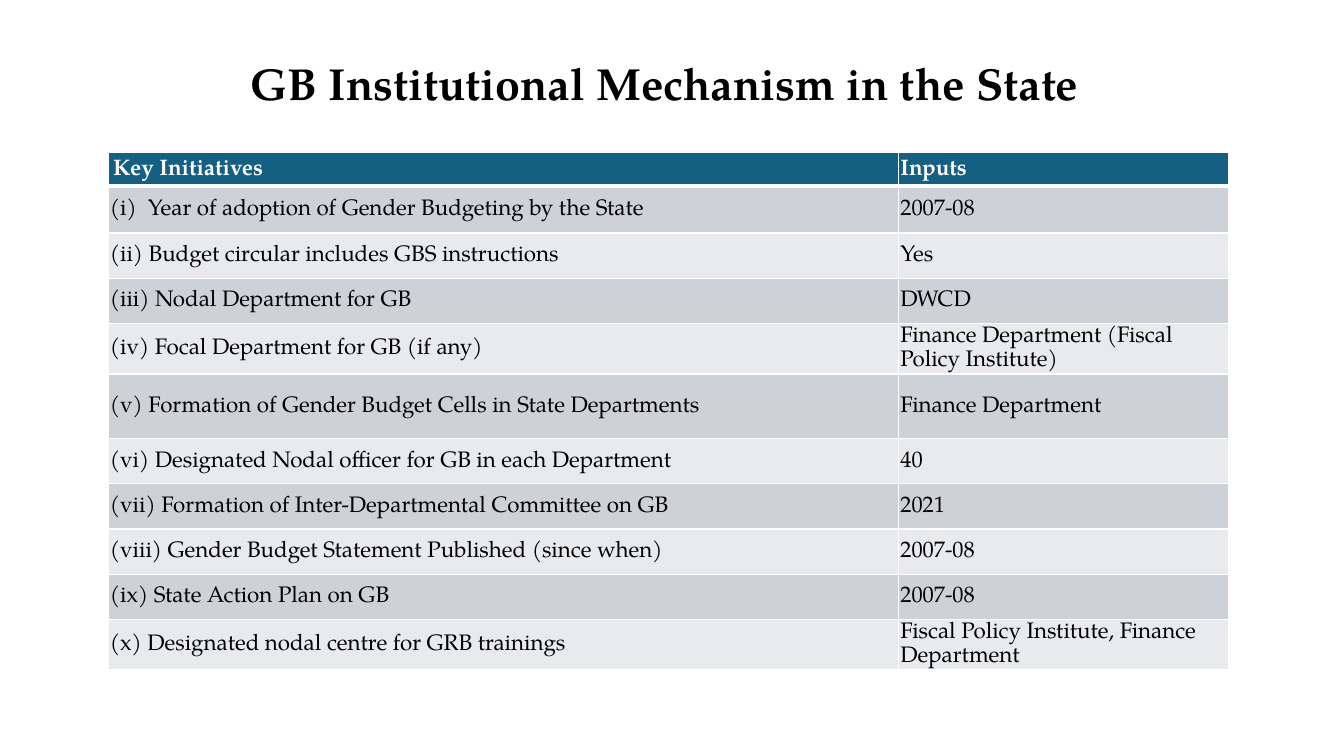
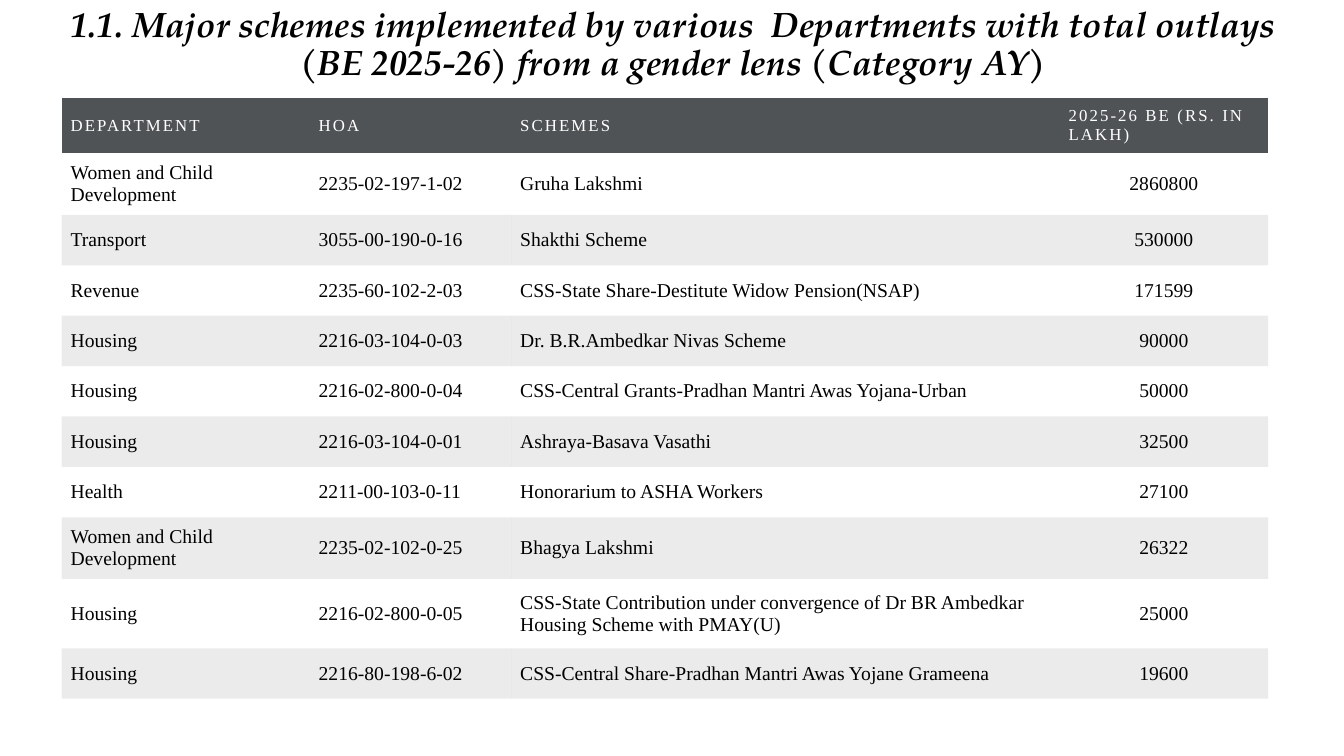
from dataclasses import dataclass

from lxml.etree import SubElement
from pptx import Presentation
from pptx.dml.color import RGBColor
from pptx.enum.text import MSO_ANCHOR, MSO_AUTO_SIZE, PP_ALIGN
from pptx.oxml.ns import qn
from pptx.util import Cm, Pt


@dataclass(frozen=True)
class Theme:
    display: str = "TeX Gyre Pagella"
    serif: str = "Times New Roman"
    black: str = "000000"
    white: str = "FFFFFF"
    teal: str = "156082"
    band_dark: str = "CCD2D8"
    band_light: str = "E8EAED"
    slate: str = "505356"
    title: float = 32
    long_title: float = 25.2
    initiative: float = 16
    scheme_head: float = 12
    scheme: float = 14
    plain_table: str = "{2D5ABB26-0587-4C30-8999-92F81FD0307C}"


THEME = Theme()

INITIATIVES = [
    ("Key Initiatives", "Inputs"),
    ("(i)  Year of adoption of Gender Budgeting by the State", "2007-08"),
    ("(ii) Budget circular includes GBS instructions", "Yes"),
    ("(iii) Nodal Department for GB", "DWCD"),
    ("(iv) Focal Department for GB (if any)",
     "Finance Department (Fiscal Policy Institute)"),
    ("(v) Formation of Gender Budget Cells in State Departments",
     "Finance Department"),
    ("(vi) Designated Nodal officer for GB in each Department", "40"),
    ("(vii) Formation of Inter-Departmental Committee on GB", "2021"),
    ("(viii) Gender Budget Statement Published (since when)", "2007-08"),
    ("(ix) State Action Plan on GB", "2007-08"),
    ("(x) Designated nodal centre for GRB trainings",
     "Fiscal Policy Institute, Finance Department"),
]

SCHEMES = [
    ("DEPARTMENT", "HOA", "SCHEMES", "2025-26 BE (RS. IN LAKH)"),
    ("Women and Child Development", "2235-02-197-1-02", "Gruha Lakshmi",
     "2860800"),
    ("Transport", "3055-00-190-0-16", "Shakthi Scheme", "530000"),
    ("Revenue", "2235-60-102-2-03",
     "CSS-State Share-Destitute Widow Pension(NSAP)", "171599"),
    ("Housing", "2216-03-104-0-03", "Dr. B.R.Ambedkar Nivas Scheme", "90000"),
    ("Housing", "2216-02-800-0-04",
     "CSS-Central Grants-Pradhan Mantri Awas Yojana-Urban", "50000"),
    ("Housing", "2216-03-104-0-01", "Ashraya-Basava Vasathi", "32500"),
    ("Health", "2211-00-103-0-11", "Honorarium to ASHA Workers", "27100"),
    ("Women and Child Development", "2235-02-102-0-25", "Bhagya Lakshmi",
     "26322"),
    ("Housing", "2216-02-800-0-05",
     "CSS-State Contribution under convergence of Dr BR Ambedkar "
     "Housing Scheme with PMAY(U)", "25000"),
    ("Housing", "2216-80-198-6-02",
     "CSS-Central Share-Pradhan Mantri Awas Yojane Grameena", "19600"),
]


def add_run(p, text, font, size, color, bold=False, italic=False):
    r = p.add_run()
    r.text = text
    r.font.name, r.font.size = font, Pt(size)
    r.font.bold, r.font.italic = bold, italic
    r.font.color.rgb = RGBColor.from_string(color)
    return r


def add_titled_slide(prs, text, box, size, italic=False):
    """Add a slide whose title placeholder fills the box."""
    s = prs.slides.add_slide(prs.slide_layouts.get_by_name("Title Only"))
    sp = s.shapes.title
    sp.left, sp.top, sp.width, sp.height = (Cm(v) for v in box)
    tf = sp.text_frame
    tf.word_wrap = True
    tf.auto_size = MSO_AUTO_SIZE.NONE
    tf.vertical_anchor = MSO_ANCHOR.MIDDLE
    p = tf.paragraphs[0]
    p.alignment, p.line_spacing = PP_ALIGN.CENTER, 0.9
    add_run(p, text, THEME.display, size, THEME.black, True, italic)
    return s


def add_grid(s, left, top, widths, heights):
    """Add an unstyled table with the given column widths and row heights."""
    frame = s.shapes.add_table(len(heights), len(widths), Cm(left), Cm(top),
                               Cm(sum(widths)), Cm(sum(heights)))
    table = frame.table
    table.horz_banding = False
    frame._element.find(".//" + qn("a:tableStyleId")).text = THEME.plain_table
    for column, width in zip(table.columns, widths):
        column.width = Cm(width)
    for row, height in zip(table.rows, heights):
        row.height = Cm(height)
    return table


def set_margins(cell, across, down):
    cell.vertical_anchor = MSO_ANCHOR.MIDDLE
    cell.margin_left = cell.margin_right = Cm(across)
    cell.margin_top = cell.margin_bottom = Cm(down)


def set_fill(cell, color, alpha=None):
    cell.fill.solid()
    cell.fill.fore_color.rgb = RGBColor.from_string(color)
    if alpha is not None:
        srgb = cell._tc.tcPr.find(".//" + qn("a:srgbClr"))
        SubElement(srgb, qn("a:alpha"), val=str(alpha * 1000))


def set_borders(cell, color, **widths):
    """Draw cell edges; tcPr wants them, in schema order, before the fill."""
    tc_pr = cell._tc.get_or_add_tcPr()
    for i, (edge, width) in enumerate(widths.items()):
        ln = SubElement(tc_pr, qn("a:" + edge), w=str(Pt(width)))
        fill = SubElement(ln, qn("a:solidFill"))
        SubElement(fill, qn("a:srgbClr"), val=color)
        tc_pr.insert(i, ln)


def add_initiatives(s, left, top):
    heights = [0.84, 1.19] + [1.14] * 3 + [1.63] + [1.14] * 5
    table = add_grid(s, left, top, [19.92, 8.31], heights)
    for i, row in enumerate(INITIATIVES):
        head = i == 0
        band = THEME.band_dark if i % 2 else THEME.band_light
        for j, text in enumerate(row):
            cell = table.cell(i, j)
            set_margins(cell, 0.05, 0.03)
            set_fill(cell, THEME.teal if head else band)
            set_borders(cell, THEME.white, lnL=1, lnR=1,
                        lnT=3 if i == 1 else 1, lnB=3 if head else 1)
            p = cell.text_frame.paragraphs[0]
            p.line_spacing, p.space_after = 1.07, Pt(8)
            add_run(p, text, THEME.display, THEME.initiative,
                    THEME.white if head else THEME.black, head)
    # The first heading sits slightly further in than the rows below
    set_margins(table.cell(0, 0), 0.13, 0)


def add_schemes(s, left, top):
    heights = [1.4, 1.55] + [1.27] * 6 + [1.55, 1.75, 1.27]
    table = add_grid(s, left, top, [6.25, 5.08, 13.82, 5.26], heights)
    for i, row in enumerate(SCHEMES):
        head = i == 0
        for j, text in enumerate(row):
            cell = table.cell(i, j)
            set_margins(cell, 0.23, 0.23)
            p = cell.text_frame.paragraphs[0]
            if head:
                set_fill(cell, THEME.slate)
                r = add_run(p, text, THEME.serif, THEME.scheme_head,
                            THEME.white)
                r.font._element.set("spc", "150")
                continue
            if i % 2 == 0:
                set_fill(cell, THEME.black, alpha=8)
            if j == len(row) - 1:
                p.alignment = PP_ALIGN.CENTER
            add_run(p, text, THEME.serif, THEME.scheme, THEME.black)


def main():
    prs = Presentation()
    prs.slide_width, prs.slide_height = Cm(33.87), Cm(19.05)

    # Institutional mechanism
    s = add_titled_slide(prs, "GB Institutional Mechanism in the State",
                         (2.72, 1.07, 28.07, 2.21), THEME.title)
    add_initiatives(s, 2.72, 3.84)

    # Major schemes
    s = add_titled_slide(
        prs, "1.1. Major schemes implemented by various  Departments with "
        "total outlays (BE 2025-26) from a gender lens (Category AY)",
        (1.37, 0.2, 31.19, 1.88), THEME.long_title, italic=True)
    add_schemes(s, 1.55, 2.46)

    prs.save("out.pptx")


if __name__ == "__main__":
    main()
